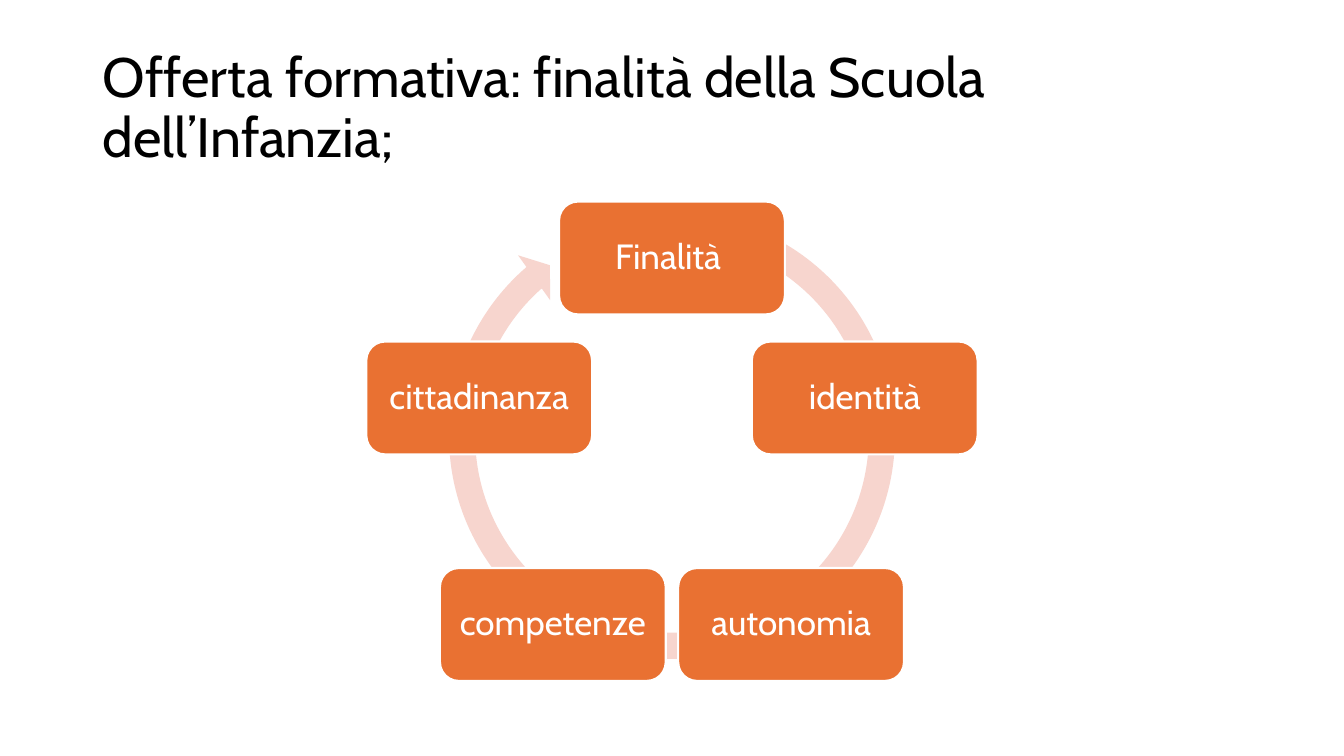
from math import cos, radians, sin

from pptx import Presentation
from pptx.dml.color import RGBColor as Rgb
from pptx.enum.shapes import MSO_SHAPE as Kind
from pptx.enum.text import MSO_ANCHOR as Anchor, PP_ALIGN as Align
from pptx.util import Inches, Pt

theme = {
    "font": "Cabin",
    "ink": Rgb.from_string("000000"),
    "white": Rgb.from_string("FFFFFF"),
    "box": Rgb.from_string("E97132"),
    "ring": Rgb.from_string("F7D5CE"),
    "title": Pt(39.6),
    "label": Pt(25),
    "edge": Pt(1.5),
}

deck = Presentation()
deck.slide_width, deck.slide_height = Inches(13.33), Inches(7.5)
slide = deck.slides.add_slide(deck.slide_layouts[6])
shapes = slide.shapes

# One percent of the slide's width and height
vw, vh = deck.slide_width / 100, deck.slide_height / 100


def write(shape, text, size, color, align=Align.LEFT, side=Inches(0.1)):
    frame = shape.text_frame
    frame.word_wrap = True
    frame.vertical_anchor = Anchor.MIDDLE
    frame.margin_left = frame.margin_right = side
    para = frame.paragraphs[0]
    para.text = text
    para.alignment = align
    para.line_spacing = 0.9
    for run in para.runs:
        run.font.name = theme["font"]
        run.font.size = size
        run.font.color.rgb = color


def draw(kind, mid_x, mid_y, width, height, fill):
    shape = shapes.add_shape(kind, int(mid_x - width / 2), int(mid_y - height / 2),
                             int(width), int(height))
    shape.shadow.inherit = False
    shape.fill.solid()
    shape.fill.fore_color.rgb = fill
    shape.line.fill.background()
    return shape


# Title
title = shapes.add_textbox(int(6.9 * vw), int(4.8 * vh), int(86.27 * vw), int(19.33 * vh))
write(title, "Offerta formativa: finalità della Scuola \vdell’Infanzia;",
      theme["title"], theme["ink"])

# Ring arrow: band, head angle, end angle, start angle, head width
ring = draw(Kind.CIRCULAR_ARROW, 50 * vw, 57.67 * vh, 62.8 * vh, 62.8 * vh, theme["ring"])
turn = 0.6  # adjustment units per degree
for slot, value in enumerate([0.055, 5.51 * turn, 228.94 * turn, 290.17 * turn, 0.058]):
    ring.adjustments[slot] = value

# Boxes, clockwise from the top of a regular pentagon
labels = ["Finalità ", "identità", "autonomia", "competenze", "cittadinanza"]
radius = 26.8 * vh
for place, label in enumerate(labels):
    angle = radians(place * 360 / len(labels))
    box = draw(Kind.ROUNDED_RECTANGLE, 50 * vw + radius * sin(angle),
               60.93 * vh - radius * cos(angle), 16.8 * vw, 14.93 * vh, theme["box"])
    box.line.color.rgb = theme["white"]
    box.line.width = theme["edge"]
    write(box, label, theme["label"], theme["white"], Align.CENTER, Inches(0.05))

deck.save("out.pptx")
